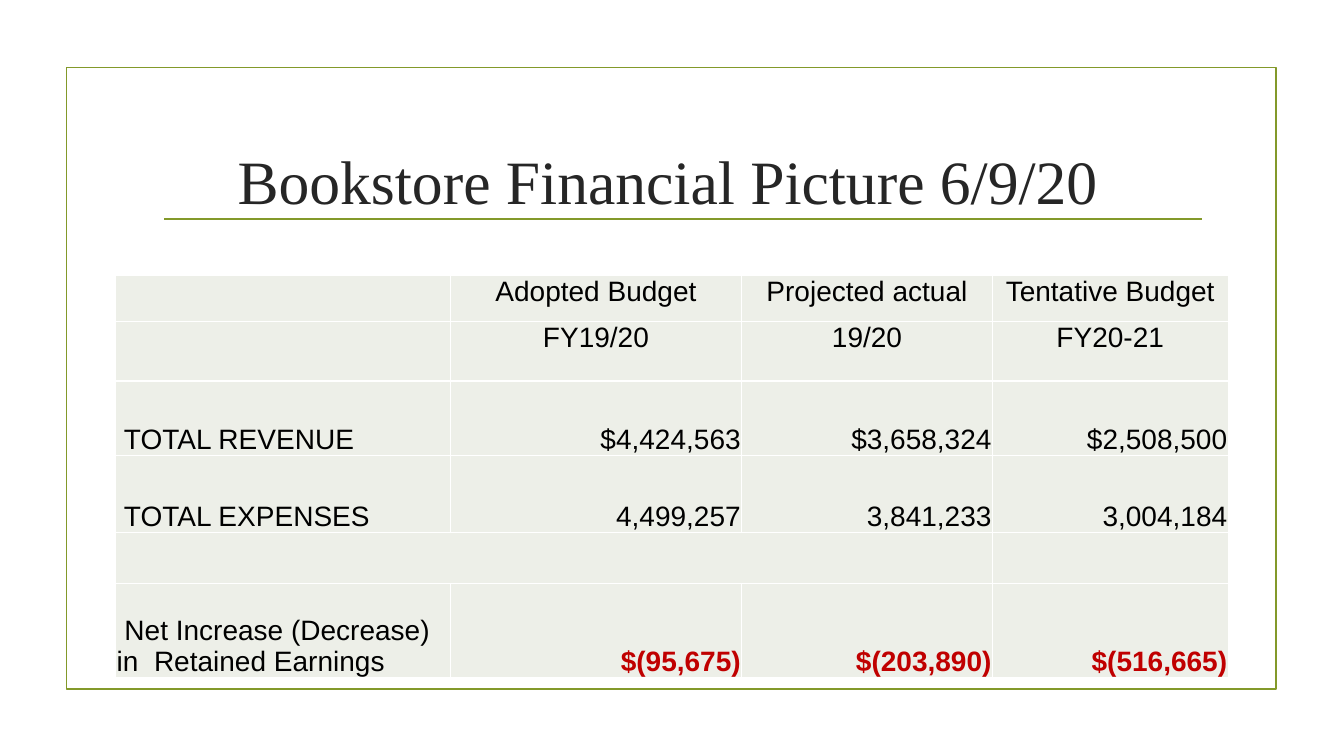
from lxml import etree
from pptx import Presentation
from pptx import util as u
from pptx.dml.color import RGBColor
from pptx.enum import shapes, text
from pptx.oxml.ns import qn

OLIVE, PALE, WHITE = "83992A", "EDEFE8", "FFFFFF"
INK, BLACK, RED = "262626", "000000", "C00000"
CENTER, RIGHT, LEFT = text.PP_ALIGN.CENTER, text.PP_ALIGN.RIGHT, text.PP_ALIGN.LEFT

COLUMN_WIDTHS = [8.43, 7.34, 6.32, 5.94]
ROW_HEIGHTS = [1.17, 1.5, 1.88, 1.93, 1.3, 2.36]
HEADER_ROWS, SPACER_ROW, NET_ROW = 2, 4, 5
BUDGET = [
    ["", "Adopted Budget", "Projected actual", "Tentative Budget"],
    ["", "FY19/20", "19/20", "FY20-21"],
    [" TOTAL REVENUE", "$4,424,563", "$3,658,324", "$2,508,500"],
    [" TOTAL EXPENSES", "4,499,257", "3,841,233", "3,004,184"],
    ["", "", "", ""],
    [" Net Increase (Decrease) in  Retained Earnings",
     "$(95,675)", "$(203,890)", "$(516,665)"],
]


def color(hex_string):
    return RGBColor.from_string(hex_string)


def add_run(paragraph, words, font_name, size, hex_string, bold=False):
    run = paragraph.add_run()
    run.text = words
    run.font.name, run.font.size, run.font.bold = font_name, u.Pt(size), bold
    run.font.color.rgb = color(hex_string)


def style_line(line):
    line.color.rgb = color(OLIVE)
    line.width = u.Pt(1.25)


def add_frame(slide, left, top, width, height):
    # Border around the slide
    frame = slide.shapes.add_shape(
        shapes.MSO_SHAPE.RECTANGLE, u.Cm(left), u.Cm(top), u.Cm(width), u.Cm(height))
    frame.shadow.inherit = False
    frame.fill.background()
    style_line(frame.line)


def add_title(slide, left, top, width, height):
    # Rule under the title
    rule_y = u.Cm(top + 2.79)
    rule = slide.shapes.add_connector(
        shapes.MSO_CONNECTOR.STRAIGHT,
        u.Cm(left + 0.99), rule_y, u.Cm(left + width - 0.25), rule_y)
    style_line(rule.line)
    etree.SubElement(rule._element.spPr, qn("a:effectLst"))

    # Title text
    title = slide.shapes.title
    title.left, title.top = u.Cm(left), u.Cm(top)
    title.width, title.height = u.Cm(width), u.Cm(height)
    title.text_frame.word_wrap = True
    title.text_frame.vertical_anchor = text.MSO_ANCHOR.MIDDLE
    paragraph = title.text_frame.paragraphs[0]
    paragraph.alignment = CENTER
    add_run(paragraph, "Bookstore Financial Picture 6/9/20", "Times New Roman", 44, INK)


def set_borders(cell):
    properties = cell._tc.get_or_add_tcPr()
    for position, side in enumerate(("lnL", "lnR", "lnT", "lnB")):
        border = etree.Element(qn(f"a:{side}"), w=str(u.Pt(1)))
        fill = etree.SubElement(border, qn("a:solidFill"))
        etree.SubElement(fill, qn("a:srgbClr"), val=WHITE)
        properties.insert(position, border)


def fill_cell(cell, words, row, column):
    cell.margin_left = cell.margin_right = cell.margin_top = u.Cm(0.02)
    cell.margin_bottom = 0
    cell.fill.solid()
    cell.fill.fore_color.rgb = color(PALE)
    set_borders(cell)
    if not words:
        return
    is_header = row < HEADER_ROWS
    is_net = row == NET_ROW and column > 0
    cell.vertical_anchor = text.MSO_ANCHOR.TOP if is_header else text.MSO_ANCHOR.BOTTOM
    paragraph = cell.text_frame.paragraphs[0]
    paragraph.alignment = CENTER if is_header else RIGHT if column else LEFT
    add_run(paragraph, words, "Arial", 20, RED if is_net else BLACK, is_net)


def add_budget_table(slide, left, top):
    # Budget table
    table = slide.shapes.add_table(
        len(ROW_HEIGHTS), len(COLUMN_WIDTHS), u.Cm(left), u.Cm(top),
        u.Cm(sum(COLUMN_WIDTHS)), u.Cm(sum(ROW_HEIGHTS))).table
    table.first_row = table.horz_banding = False
    for column, width in zip(table.columns, COLUMN_WIDTHS):
        column.width = u.Cm(width)
    for row, height in zip(table.rows, ROW_HEIGHTS):
        row.height = u.Cm(height)
    for row, values in enumerate(BUDGET):
        for column, words in enumerate(values):
            fill_cell(table.cell(row, column), words, row, column)
    table.cell(SPACER_ROW, 0).merge(table.cell(SPACER_ROW, 2))


def main():
    presentation = Presentation()
    presentation.slide_width, presentation.slide_height = u.Cm(33.87), u.Cm(19.05)
    slide = presentation.slides.add_slide(presentation.slide_layouts[5])
    add_frame(slide, 1.68, 1.7, 30.48, 15.67)
    add_title(slide, 3.15, 2.72, 27.38, 3.63)
    add_budget_table(slide, 2.92, 6.93)
    presentation.save("out.pptx")


if __name__ == "__main__":
    main()
